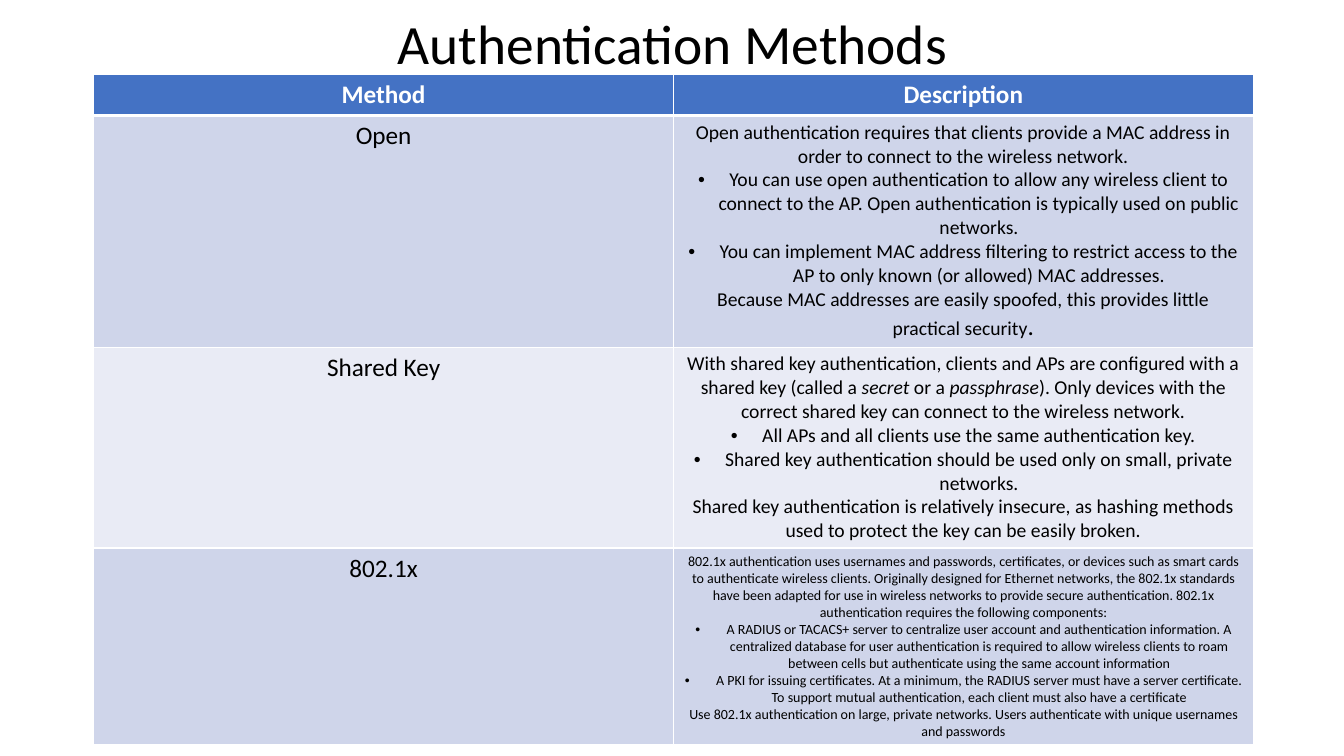
from lxml import etree
from pptx import Presentation
from pptx.dml.color import RGBColor
from pptx.enum.text import MSO_ANCHOR, MSO_AUTO_SIZE, PP_ALIGN
from pptx.oxml.ns import qn
from pptx.util import Inches, Pt

CENTER = PP_ALIGN.CENTER
MIDDLE = MSO_ANCHOR.MIDDLE
NO_FIT = MSO_AUTO_SIZE.NONE


def color(code):
    return RGBColor.from_string(code)


def add_run(para, text, hue="000000", **look):
    run = para.add_run()
    run.text = text
    run.font.color.rgb = color(hue)
    for name, value in {"name": "Calibri", "bold": False, **look}.items():
        setattr(run.font, name, value)


rows = [
    (0.39, "4472C4", 18, "Method", ["Description"]),
    (2.21, "CFD5EA", 14, "Open", [
        "Open authentication requires that clients provide a MAC address in order to connect to the wireless network.",
        "• You can use open authentication to allow any wireless client to connect to the AP. Open authentication is typically used on public networks.",
        "• You can implement MAC address filtering to restrict access to the AP to only known (or allowed) MAC addresses.",
        "Because MAC addresses are easily spoofed, this provides little practical security",
    ]),
    (1.92, "E9EBF5", 14, "Shared Key", [
        "With shared key authentication, clients and APs are configured with a shared key (called a *secret* or a *passphrase*). Only devices with the correct shared key can connect to the wireless network.",
        "• All APs and all clients use the same authentication key.",
        "• Shared key authentication should be used only on small, private networks.",
        "Shared key authentication is relatively insecure, as hashing methods used to protect the key can be easily broken.",
    ]),
    (1.94, "CFD5EA", 10, "802.1x", [
        "802.1x authentication uses usernames and passwords, certificates, or devices such as smart cards to authenticate wireless clients. Originally designed for Ethernet networks, the 802.1x standards have been adapted for use in wireless networks to provide secure authentication. 802.1x authentication requires the following components:",
        "• A RADIUS or TACACS+ server to centralize user account and authentication information. A centralized database for user authentication is required to allow wireless clients to roam between cells but authenticate using the same account information",
        "• A PKI for issuing certificates. At a minimum, the RADIUS server must have a server certificate. To support mutual authentication, each client must also have a certificate",
        "Use 802.1x authentication on large, private networks. Users authenticate with unique usernames and passwords",
    ]),
]

deck = Presentation()
deck.slide_width = Inches(13.33)
deck.slide_height = Inches(7.5)
slide = deck.slides.add_slide(deck.slide_layouts[5])

title = slide.shapes.title
place = {"left": 0.92, "top": 0.15, "width": 11.5, "height": 0.62}
for name, value in place.items():
    setattr(title, name, Inches(value))
frame = title.text_frame
frame.auto_size = NO_FIT
frame.vertical_anchor = MIDDLE
head = frame.paragraphs[0]
head.alignment = CENTER
head.line_spacing = 0.9
add_run(head, "Authentication Methods", size=Pt(39.6))

table = slide.shapes.add_table(
    len(rows), 2, Inches(0.93), Inches(0.74), Inches(11.5), Inches(6.46)
).table
for column in table.columns:
    column.width = Inches(5.75)

for r, (height, fill, size, method, notes) in enumerate(rows):
    table.rows[r].height = Inches(height)
    hue = "000000" if r else "FFFFFF"
    for c, (points, lines) in enumerate([(18, [method]), (size, notes)]):
        cell = table.cell(r, c)
        props = cell._tc.get_or_add_tcPr()
        for side in "LRTB":
            thick = (r, side) in [(0, "B"), (1, "T")]
            edge = etree.SubElement(props, qn("a:ln" + side), w=str(Pt(3 if thick else 1)))
            paint = etree.SubElement(edge, qn("a:solidFill"))
            etree.SubElement(paint, qn("a:srgbClr"), val="FFFFFF")
        cell.fill.solid()
        cell.fill.fore_color.rgb = color(fill)
        frame = cell.text_frame
        for n, line in enumerate(lines):
            para = frame.add_paragraph() if n else frame.paragraphs[0]
            para.alignment = CENTER
            if line.startswith("• "):
                style = para._p.get_or_add_pPr()
                style.set("marL", str(Inches(0.31)))
                style.set("indent", str(-Inches(0.31)))
                etree.SubElement(style, qn("a:buFont"), typeface="Arial")
                etree.SubElement(style, qn("a:buChar"), char="•")
            for k, part in enumerate(line.removeprefix("• ").split("*")):
                add_run(para, part, hue, size=Pt(points), bold=r == 0, italic=k % 2 == 1)

add_run(table.cell(1, 1).text_frame.paragraphs[-1], ".", size=Pt(18))

deck.save("out.pptx")
